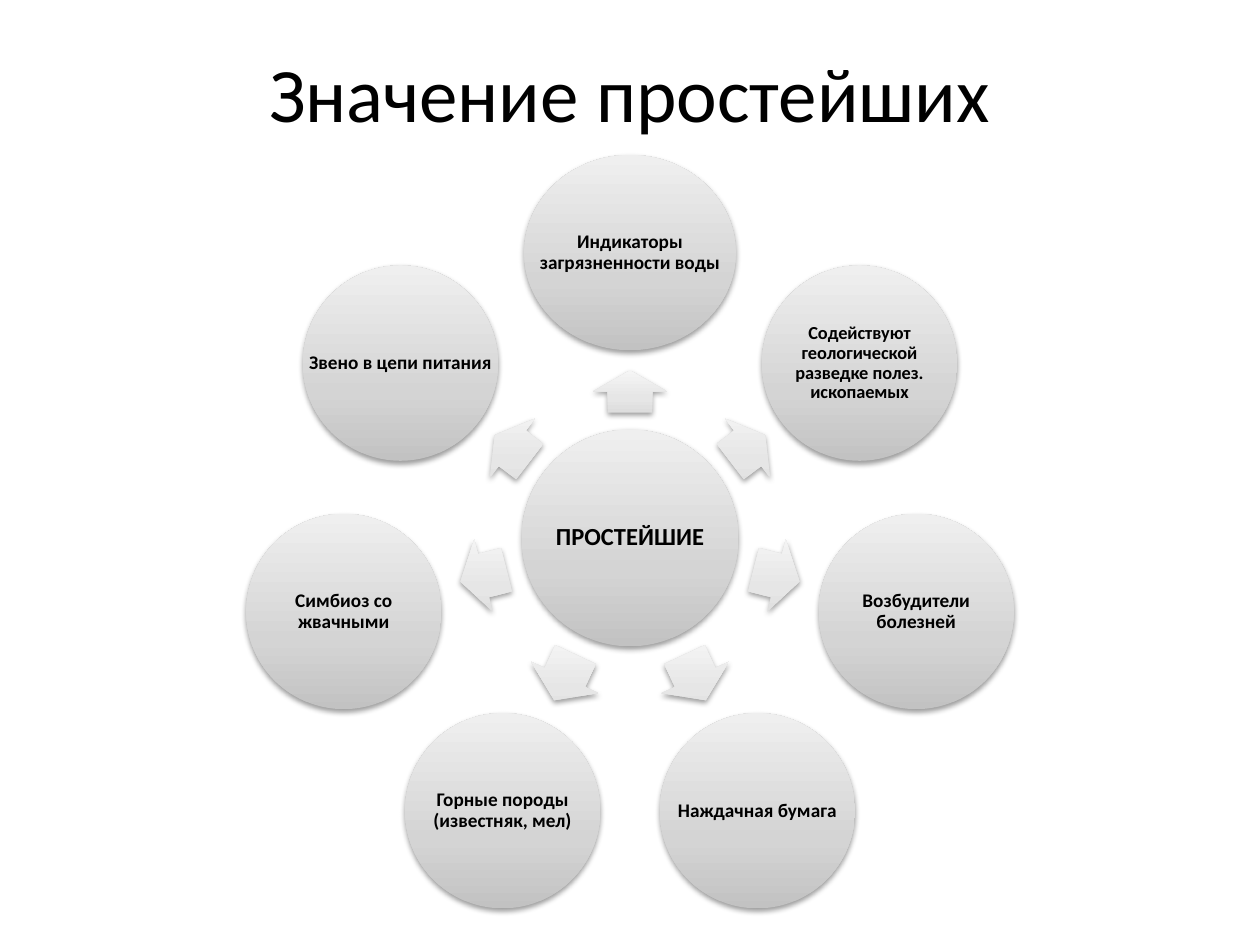
from copy import deepcopy
from math import atan2, cos, degrees, hypot, pi, sin

from pptx import Presentation
from pptx.dml.color import RGBColor
from pptx.enum.shapes import MSO_SHAPE as Shape
from pptx.enum.text import MSO_ANCHOR as Anchor, PP_ALIGN as Align
from pptx.oxml import parse_xml
from pptx.oxml.ns import nsdecls, qn
from pptx.util import Inches, Pt

BLACK = RGBColor(0x00, 0x00, 0x00)
CIRCLE_SHADES = [RGBColor(0xC2, 0xC2, 0xC2), RGBColor(0xD4, 0xD4, 0xD4), RGBColor(0xEF, 0xEF, 0xEF)]
ARROW_SHADES = [RGBColor(0xDD, 0xDD, 0xDD), RGBColor(0xE6, 0xE6, 0xE6), RGBColor(0xF5, 0xF5, 0xF5)]
STOPS = [0, 0.35, 1]
SHADOW = (
    f'<a:outerShdw {nsdecls("a")} blurRad="40000" dist="20000" dir="5400000" rotWithShape="0">'
    '<a:srgbClr val="000000"><a:alpha val="38000"/></a:srgbClr></a:outerShdw>'
)

HUB_X, HUB_Y, HUB_SIZE = 5, 4.27, 1.72
RING_Y, RING_RADIUS = 4.335, 2.33
ROLE_SIZE, TOP_ROLE_WIDTH = 1.55, 1.68
ARROW_HEIGHT = 0.59
ROLES = [
    ("Индикаторы загрязненности воды", 11),
    ("Содействуют геологической разведке полез. ископаемых", 10.5),
    ("Возбудители болезней", 11),
    ("Наждачная бумага", 11),
    ("Горные породы (известняк, мел)", 11),
    ("Симбиоз со жвачными", 11),
    ("Звено в цепи питания", 11),
]


class Diagram:
    font = "Calibri"

    def __init__(self, slide):
        self.slide = slide

    def text(self, words, x, y, width, height, size, bold=True, spacing=0.9, inset=0.03):
        box = self.slide.shapes.add_textbox(
            Inches(x - width / 2), Inches(y - height / 2), Inches(width), Inches(height))
        frame = box.text_frame
        frame.word_wrap = True
        frame.vertical_anchor = Anchor.MIDDLE
        frame.margin_left = frame.margin_right = Inches(inset)
        frame.margin_top = frame.margin_bottom = Inches(inset)
        line = frame.paragraphs[0]
        line.text = words
        line.alignment = Align.CENTER
        line.line_spacing = spacing
        line.font.name = self.font
        line.font.size = Pt(size)
        line.font.bold = bold
        line.font.color.rgb = BLACK

    def shaded(self, kind, x, y, width, height, shades):
        shape = self.slide.shapes.add_shape(
            kind, Inches(x - width / 2), Inches(y - height / 2), Inches(width), Inches(height))
        shape.fill.gradient()
        shape.fill.gradient_angle = 90
        properties = shape._element.spPr
        properties.find(qn("a:gradFill")).set("rotWithShape", "0")
        stop_list = properties.find(".//" + qn("a:gsLst"))
        stop_list.insert(1, deepcopy(stop_list[0]))
        for stop, position, shade in zip(shape.fill.gradient_stops, STOPS, shades):
            stop.position = position
            stop.color.rgb = shade
        shape.line.fill.background()
        shape.shadow.inherit = False
        properties.find(qn("a:effectLst")).append(parse_xml(SHADOW))
        return shape

    def circle(self, words, x, y, width, height, size):
        self.shaded(Shape.OVAL, x, y, width, height, CIRCLE_SHADES)
        self.text(words, x, y, width, height, size)

    def arrow(self, x, y, length, angle):
        arrow = self.shaded(Shape.RIGHT_ARROW, x, y, length, ARROW_HEIGHT, ARROW_SHADES)
        arrow.adjustments[0] = 0.6
        arrow.adjustments[1] = 0.5
        arrow.rotation = round(degrees(angle), 1) % 360


def main():
    deck = Presentation()
    deck.slide_width, deck.slide_height = Inches(10), Inches(7.5)
    diagram = Diagram(deck.slides.add_slide(deck.slide_layouts[6]))
    diagram.text("Значение простейших", 5, 0.725, 9, 0.85, 44, bold=False, spacing=1, inset=0.05)
    diagram.circle("ПРОСТЕЙШИЕ", HUB_X, HUB_Y, HUB_SIZE, HUB_SIZE, 14)

    for index, (role, size) in enumerate(ROLES):
        turn = 2 * pi * index / len(ROLES)
        x = HUB_X + RING_RADIUS * sin(turn)
        y = RING_Y - RING_RADIUS * cos(turn)
        angle = atan2(y - HUB_Y, x - HUB_X)
        gap = hypot(x - HUB_X, y - HUB_Y) - (HUB_SIZE + ROLE_SIZE) / 2
        reach = HUB_SIZE / 2 + 0.48 * gap
        diagram.arrow(HUB_X + reach * cos(angle), HUB_Y + reach * sin(angle), 0.53 * gap, angle)
        width = ROLE_SIZE if index else TOP_ROLE_WIDTH
        diagram.circle(role, x, y, width, ROLE_SIZE, size)

    deck.save("out.pptx")


if __name__ == "__main__":
    main()
